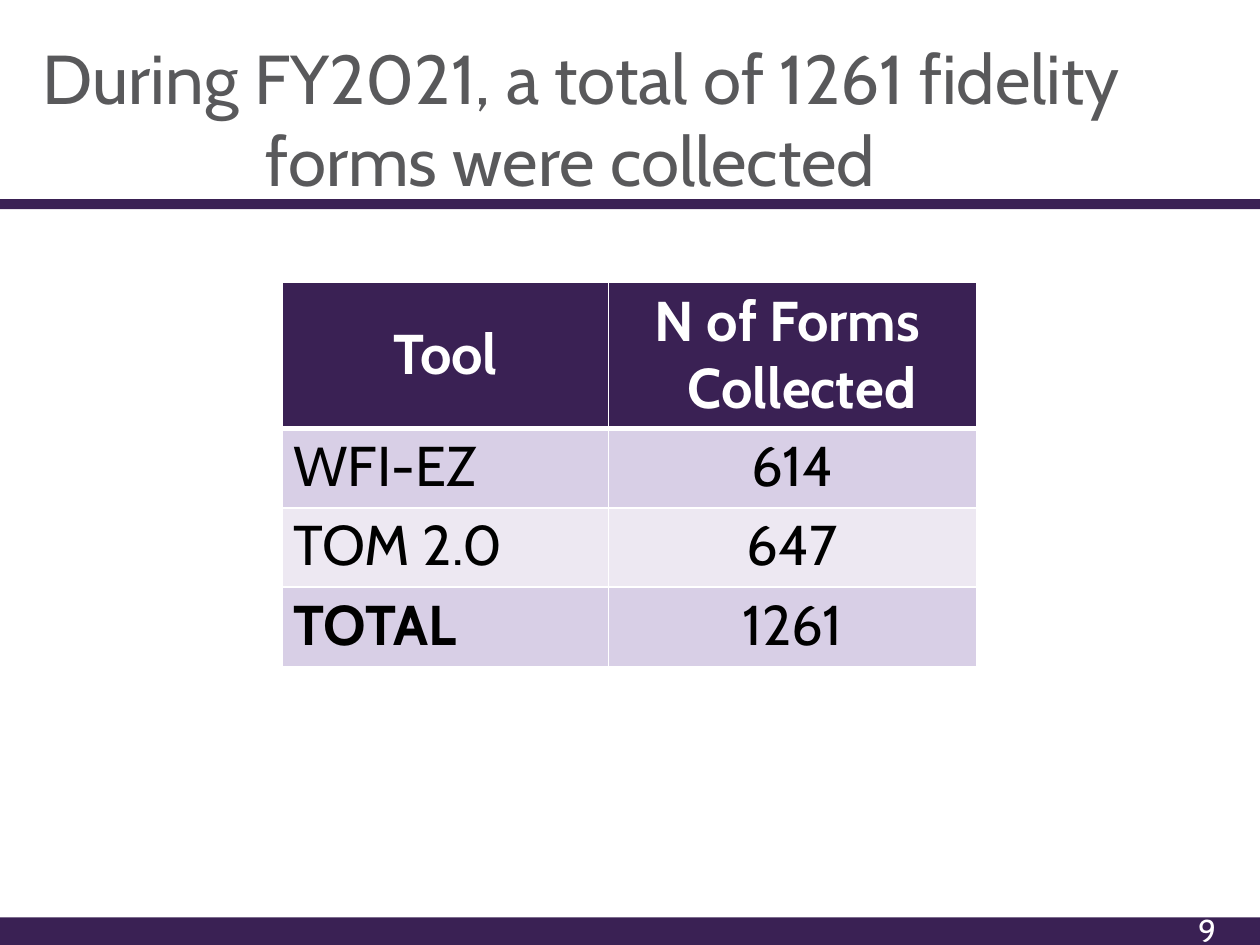
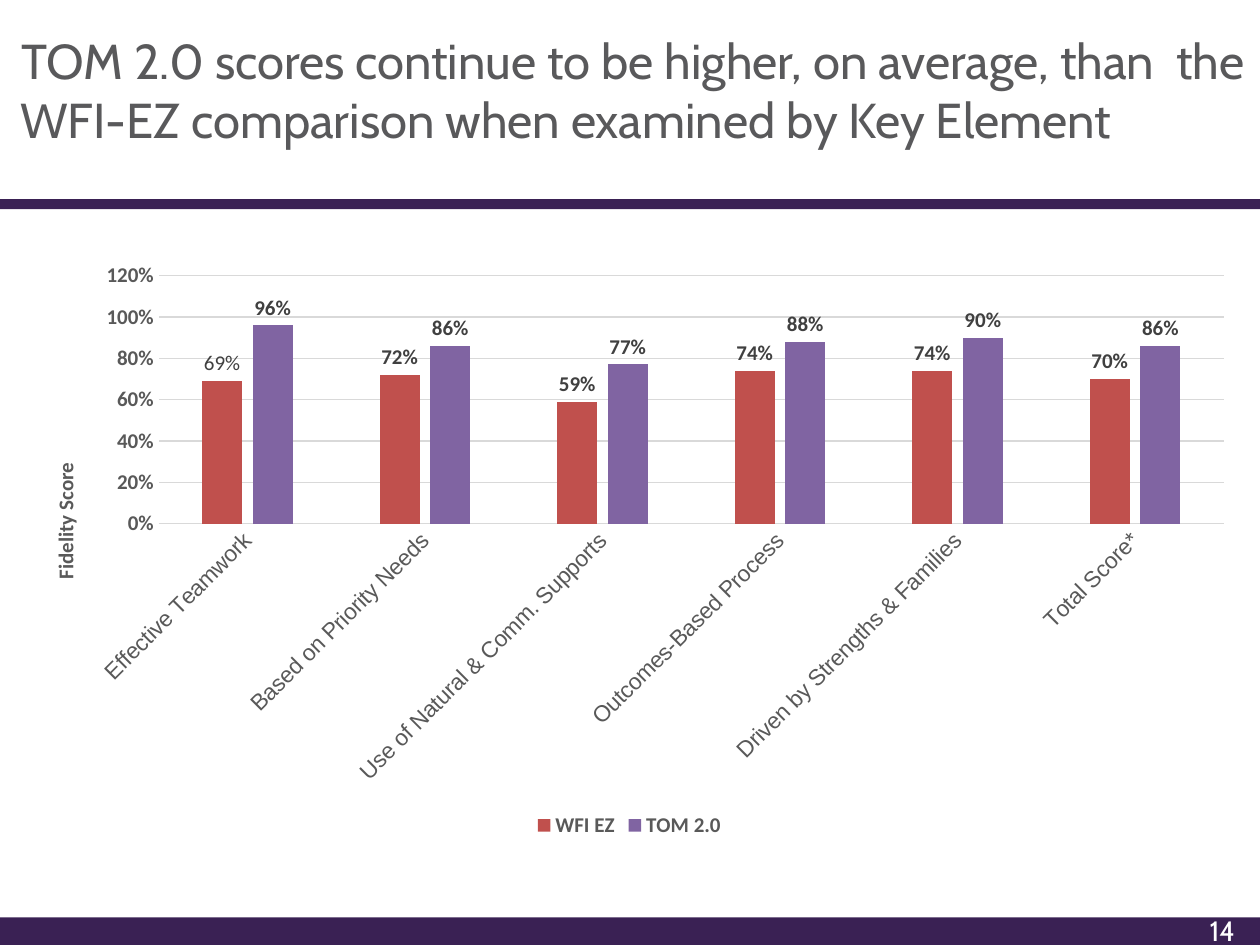
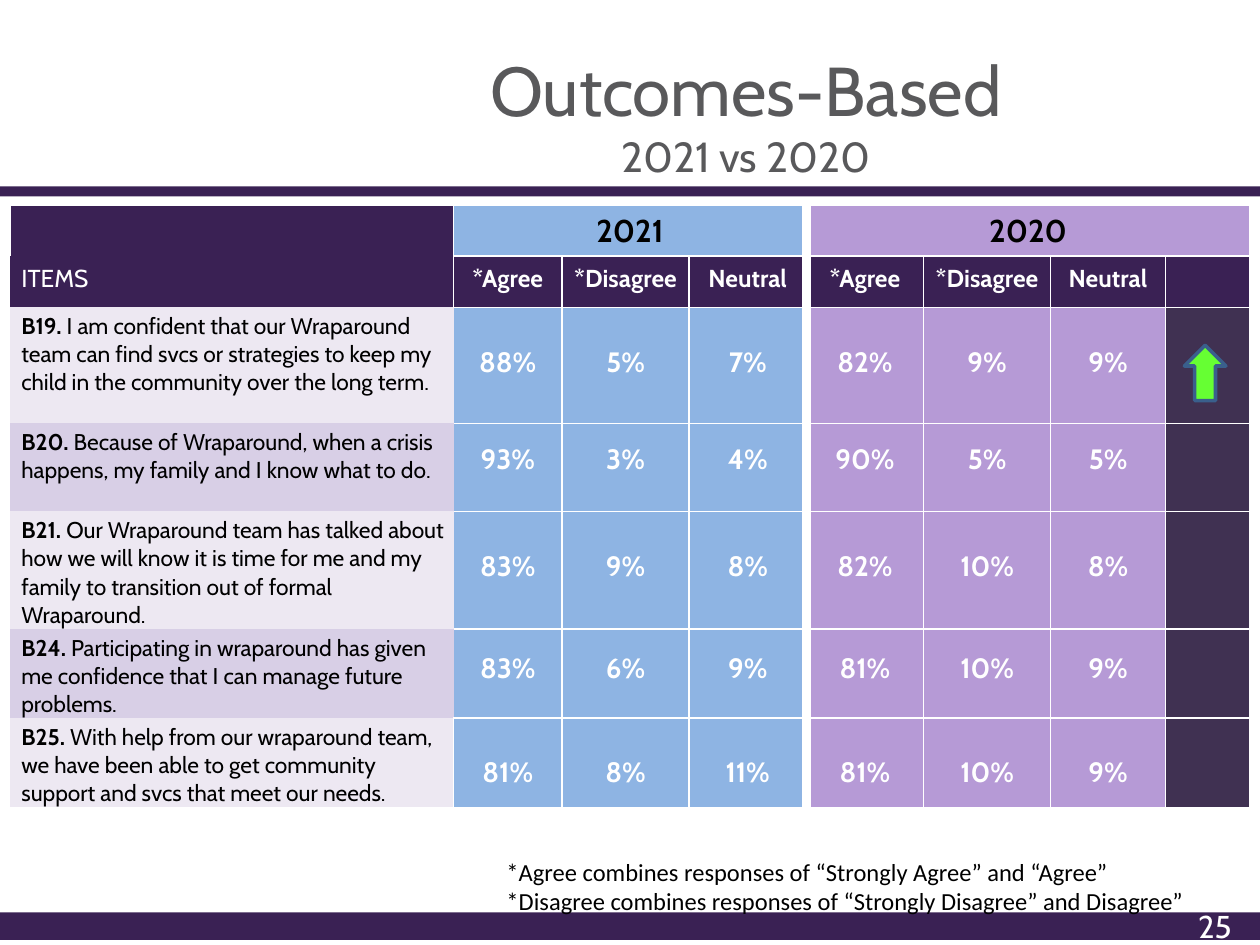
from dataclasses import dataclass

from lxml.etree import SubElement
from pptx import Presentation
from pptx.chart.data import CategoryChartData
from pptx.dml.color import RGBColor
from pptx.enum.chart import XL_CHART_TYPE as ChartType
from pptx.enum.chart import XL_LABEL_POSITION as LabelPos
from pptx.enum.chart import XL_LEGEND_POSITION as LegendPos
from pptx.enum.chart import XL_TICK_MARK as TickMark
from pptx.enum.shapes import MSO_SHAPE as Shape
from pptx.enum.text import MSO_ANCHOR as Anchor
from pptx.enum.text import MSO_AUTO_SIZE as AutoSize
from pptx.enum.text import PP_ALIGN as Align
from pptx.oxml import parse_xml
from pptx.oxml.ns import nsdecls, qn
from pptx.util import Emu, Inches, Pt

COLUMNS, ROWS = 100, 75  # grid that covers a slide


@dataclass(frozen=True)
class Theme:
    # Colours
    purple: str = "3A2154"
    deep: str = "403152"
    lilac: str = "D8CFE6"
    pale: str = "EDE8F2"
    blue: str = "8EB4E3"
    violet: str = "B69AD6"
    heading: str = "59595B"
    white: str = "FFFFFF"
    black: str = "000000"
    wfi: str = "C0504D"
    tom: str = "8064A2"
    axis: str = "595959"
    value: str = "404040"
    grid: str = "D9D9D9"
    arrow: str = "66FF33"
    arrow_edge: str = "3A5F8C"
    # Fonts and type sizes
    font: str = "Cabin"
    note_font: str = "Calibri"
    label_font: str = "Arial"
    title: float = 39.5
    long_title: float = 28
    subtitle: float = 24
    big: float = 32
    year: float = 18
    score: float = 16
    body: float = 14
    item: float = 13
    chart: float = 12


def rgb(code):
    return RGBColor.from_string(code)


def set_font(font, size, color, bold=False, name=Theme.font):
    font.size, font.bold, font.name = Pt(size), bold, name
    font.color.rgb = rgb(color)


def set_indent(paragraph, left, first=0, right=0):
    props = paragraph._p.get_or_add_pPr()
    for key, inches in (("marL", left), ("indent", first), ("marR", right)):
        props.set(key, str(Inches(inches)))


def set_margins(target, left=0, top=0, right=0, bottom=0):
    target.margin_left, target.margin_top = Inches(left), Inches(top)
    target.margin_right, target.margin_bottom = Inches(right), Inches(bottom)


def place_by_share(parent, target, x, y, w=None, h=None):
    """Put a chart part at shares of the chart's size."""
    layout = parent.find(qn("c:layout"))
    if layout is None:
        layout = parse_xml(f"<c:layout {nsdecls('c')}/>")
        position = 1 if parent.tag == qn("c:title") else 0
        parent.insert(position, layout)
    manual = SubElement(layout, qn("c:manualLayout"))
    settings = [("layoutTarget", target), ("xMode", "edge"), ("yMode", "edge"),
                ("x", x), ("y", y), ("w", w), ("h", h)]
    for tag, setting in settings:
        if setting is not None:
            SubElement(manual, qn(f"c:{tag}")).set("val", str(setting))


class Deck:
    def __init__(self, theme):
        self.theme = theme
        self.prs = Presentation()
        self.prs.slide_width, self.prs.slide_height = Inches(10), Inches(7.5)
        self.slide = None

    def box(self, col, row, cols, rows):
        unit_x = self.prs.slide_width / COLUMNS
        unit_y = self.prs.slide_height / ROWS
        return (Emu(round(col * unit_x)), Emu(round(row * unit_y)),
                Emu(round(cols * unit_x)), Emu(round(rows * unit_y)))

    def start(self, rule_row=15.8, band_row=72.8):
        self.slide = self.prs.slides.add_slide(self.prs.slide_layouts[5])
        self.shape(Shape.RECTANGLE, (0, band_row, COLUMNS, 2.2), self.theme.purple)
        self.shape(Shape.RECTANGLE, (0, rule_row, COLUMNS, 0.8), self.theme.purple)

    def shape(self, kind, area, fill, edge=None):
        shape = self.slide.shapes.add_shape(kind, *self.box(*area))
        shape.shadow.inherit = False
        shape.fill.solid()
        shape.fill.fore_color.rgb = rgb(fill)
        if edge:
            shape.line.color.rgb, shape.line.width = rgb(edge), Pt(2)
        else:
            shape.line.fill.background()

    def title(self, area, lines, top, align=Align.LEFT, indent=(0, 0), spacing=None):
        """Lines are pairs of text and type size."""
        title = self.slide.shapes.title
        title.left, title.top, title.width, title.height = self.box(*area)
        frame = title.text_frame
        frame.auto_size, frame.word_wrap = AutoSize.NONE, True
        frame.vertical_anchor = Anchor.TOP
        set_margins(frame, top=top)
        frame.text = "\n".join(text for text, _ in lines)
        for paragraph, (_, size) in zip(frame.paragraphs, lines):
            set_indent(paragraph, *indent)
            paragraph.alignment = align
            paragraph.line_spacing = spacing
            set_font(paragraph.font, size, self.theme.heading)

    def text(self, area, text, size, color, font, spacing=None):
        frame = self.slide.shapes.add_textbox(*self.box(*area)).text_frame
        frame.word_wrap = True
        set_margins(frame)
        frame.text = text
        for paragraph in frame.paragraphs:
            paragraph.line_spacing = spacing
            set_font(paragraph.font, size, color, name=font)

    def page(self, number, col=95.1, row=72.8, size=Theme.year):
        self.text((col, row, 4, 2.5), number, size, self.theme.white,
                  self.theme.font, Pt(18))

    def table(self, col, row, widths, heights):
        area = self.box(col, row, sum(widths), sum(heights))
        table = self.slide.shapes.add_table(len(heights), len(widths), *area).table
        table.first_row = table.horz_banding = False
        for column, width in zip(table.columns, widths):
            column.width = self.box(0, 0, width, 0)[2]
        for line, height in zip(table.rows, heights):
            line.height = self.box(0, 0, 0, height)[3]
        return table

    def cell(self, cell, fill, text="", size=Theme.body, color=Theme.white, lead="",
             bold=False, top=0, align=Align.CENTER, spacing=None, borders=None):
        """Lead is bold text before the rest; borders gives widths that are not 1."""
        set_margins(cell, left=0.09 if align == Align.LEFT else 0, top=top)
        paragraph = cell.text_frame.paragraphs[0]
        paragraph.alignment, paragraph.line_spacing = align, spacing
        if lead:
            lead_run = paragraph.add_run()
            lead_run.text, lead_run.font.bold = lead, True
        if text:
            paragraph.add_run().text = text
        set_font(paragraph.font, size, color, bold)
        cell.fill.solid()
        cell.fill.fore_color.rgb = rgb(fill)
        widths = {"L": 1, "R": 1, "T": 1, "B": 1} | (borders or {})
        for place, (side, width) in enumerate(widths.items()):
            paint = (f'<a:solidFill><a:srgbClr val="{self.theme.white}"/></a:solidFill>'
                     if width else "<a:noFill/>")
            cell._tc.get_or_add_tcPr().insert(place, parse_xml(
                f'<a:ln{side} {nsdecls("a")} w="{Pt(width)}">{paint}</a:ln{side}>'))
        return paragraph

    def column_chart(self, area, categories, series, axis_title):
        """Series are triples of name, values and colour."""
        theme = self.theme
        data = CategoryChartData(number_format="0%")
        data.categories = categories
        for name, values, _ in series:
            data.add_series(name, values)
        chart = self.slide.shapes.add_chart(
            ChartType.COLUMN_CLUSTERED, *self.box(*area), data).chart
        chart.has_title = False
        set_font(chart.font, theme.chart, theme.axis, True, theme.note_font)
        plot = chart.plots[0]
        plot.vary_by_categories, plot.gap_width, plot.overlap = False, 219, -27

        # Columns and their labels
        for columns, (_, _, color) in zip(plot.series, series):
            columns.format.fill.solid()
            columns.format.fill.fore_color.rgb = rgb(color)
            labels = columns.data_labels
            labels.show_value, labels.position = True, LabelPos.OUTSIDE_END
            labels.number_format, labels.number_format_is_linked = "0%", False
            set_font(labels.font, theme.chart, theme.value, True, theme.note_font)

        # Axes
        names, scores = chart.category_axis, chart.value_axis
        names.major_tick_mark = scores.major_tick_mark = TickMark.NONE
        set_font(names.tick_labels.font, theme.item, theme.axis, name=theme.label_font)
        names._element.find(qn("c:txPr")).find(qn("a:bodyPr")).set("rot", "-2700000")
        set_font(scores.tick_labels.font, theme.chart, theme.axis, True, theme.note_font)
        scores.tick_labels.number_format = "0%"
        scores.tick_labels.number_format_is_linked = False
        scores.minimum_scale, scores.maximum_scale, scores.major_unit = 0, 1.2, 0.2
        scores.format.line.fill.background()
        for line in (names.format.line, scores.major_gridlines.format.line):
            line.color.rgb, line.width = rgb(theme.grid), Pt(0.75)
        heading = scores.axis_title
        heading.text_frame.text = axis_title
        set_font(heading.text_frame.paragraphs[0].font, theme.chart, theme.axis,
                 True, theme.note_font)
        heading.text_frame._txBody.find(qn("a:bodyPr")).set("rot", "-5400000")

        # Legend and layout
        chart.has_legend = True
        chart.legend.position = LegendPos.BOTTOM
        chart.legend.include_in_layout = False
        set_font(chart.legend.font, theme.chart, theme.axis, True, theme.note_font)
        place_by_share(heading._element, None, 0.03, 0.35)
        plot_area = chart._chartSpace.find(qn("c:chart")).find(qn("c:plotArea"))
        place_by_share(plot_area, "inner", 0.12, 0.04, 0.86, 0.42)
        return chart


def forms_slide(deck):
    theme = deck.theme
    deck.start()
    deck.title((0.8, -0.5, 98.3, 16.5),
               [("During FY2021, a total of 1261 fidelity forms were collected", theme.title)],
               top=0.33, indent=(2.03, -1.77), spacing=Pt(47.2))
    forms = deck.table(22.4, 22.4, [25.9, 29.2], [11.6, 6.3, 6.3, 6.3])

    # Header
    header = dict(size=theme.big, bold=True, borders={"B": 3})
    deck.cell(forms.cell(0, 0), theme.purple, "Tool", top=0.3, **header)
    collected = deck.cell(forms.cell(0, 1), theme.purple, "N of Forms Collected",
                          top=0.05, spacing=Pt(38.2), **header)
    set_indent(collected, 0.55, -0.23, 0.4)

    # Counts
    counts = [("WFI-EZ", "614"), ("TOM 2.0", "647"), ("TOTAL", "1261")]
    for row, (tool, count) in enumerate(counts, start=1):
        style = dict(fill=theme.lilac if row % 2 else theme.pale, size=theme.big,
                     color=theme.black, top=0.03, borders={"T": 3 if row == 1 else 1})
        deck.cell(forms.cell(row, 0), text=tool, bold=tool == "TOTAL",
                  align=Align.LEFT, **style)
        deck.cell(forms.cell(row, 1), text=count, **style)
    deck.page("9")


def scores_slide(deck):
    theme = deck.theme
    deck.start()
    deck.title((0.8, -2.5, 99.2, 14.4),
               [("TOM 2.0 scores continue to be higher, on average, than  the "
                 "WFI-EZ comparison when examined by Key Element", theme.long_title)],
               top=0.49, indent=(0.08, 0.01))
    elements = ["Effective Teamwork", "Based on Priority Needs",
                "Use of Natural & Comm. Supports", "Outcomes-Based Process",
                "Driven by Strengths & Families", "Total Score*"]
    chart = deck.column_chart(
        (0.8, 20, 98.3, 46.9), elements,
        [("WFI EZ", (0.69, 0.72, 0.59, 0.74, 0.74, 0.7), theme.wfi),
         ("TOM 2.0", (0.96, 0.86, 0.77, 0.88, 0.9, 0.86), theme.tom)],
        "Fidelity Score")

    # The first label is not bold
    teamwork = chart.plots[0].series[0].points[0].data_label
    teamwork.position = LabelPos.OUTSIDE_END
    teamwork.text_frame.text = "69%"
    set_font(teamwork.text_frame.paragraphs[0].runs[0].font, theme.chart, theme.value,
             name=theme.note_font)
    deck.page("14", col=96, row=72.7, size=theme.score)


def outcomes_slide(deck):
    theme = deck.theme
    deck.start(rule_row=14.8, band_row=72.4)
    deck.title((5.2, -0.5, 89.6, 15.1),
               [("Outcomes-Based", theme.title), ("2021 vs 2020", theme.subtitle)],
               top=0.43, align=Align.CENTER, indent=(1.84, 0))

    # Code, statement, space above the scores, row height, scores
    items = [
        ("B19.", " I am confident that our Wraparound team can find svcs or strategies "
         "to keep my child in the community over the long term.",
         0.3, 9.2, (88, 5, 7, 82, 9, 9)),
        ("B20.", " Because of Wraparound, when a crisis happens, my family and I know "
         "what to do.", 0.15, 7, (93, 3, 4, 90, 5, 5)),
        ("B21.", " Our Wraparound team has talked about how we will know it is time for "
         "me and my family to transition out of formal Wraparound.",
         0.3, 9.2, (83, 9, 8, 82, 10, 8)),
        ("B24.", " Participating in wraparound has given me confidence that I can manage "
         "future problems.", 0.18, 7, (83, 6, 9, 81, 10, 9)),
        ("B25.", " With help from our wraparound team, we have been able to get community "
         "support and svcs that meet our needs.", 0.3, 7, (81, 8, 11, 81, 10, 9)),
    ]
    results = deck.table(0.8, 16.2, [35.2, 8.6, 10.1, 9.3, 9.3, 10.1, 9.1, 6.7],
                         [4.1, 4.1] + [item[3] for item in items])
    year_gap = {3: {"R": 6}, 4: {"L": 6}}  # wide line between the years

    # Years
    deck.cell(results.cell(0, 0), theme.purple, borders={"T": 3, "B": 0})
    for year, fill, first, last, gap in (("2021", theme.blue, 1, 3, {"R": 6}),
                                         ("2020", theme.violet, 4, 7, {"L": 6})):
        results.cell(0, first).merge(results.cell(0, last))
        deck.cell(results.cell(0, first), fill, year, theme.year, theme.black,
                  bold=True, top=0.06, borders={"T": 3} | gap)

    # Answers
    deck.cell(results.cell(1, 0), theme.purple, "ITEMS", top=0.06, align=Align.LEFT,
              borders={"L": 0, "T": 0, "B": 0})
    answers = ["*Agree", "*Disagree", "Neutral"] * 2 + [""]
    for col, answer in enumerate(answers, start=1):
        deck.cell(results.cell(1, col), theme.purple, answer, bold=True, top=0.06,
                  borders=year_gap.get(col))

    # Items and scores
    for row, (code, statement, top, _, scores) in enumerate(items, start=2):
        edge = 1 if row == len(items) + 1 else 0
        deck.cell(results.cell(row, 0), theme.lilac if row % 2 else theme.pale,
                  statement, theme.item, theme.black, lead=code, top=0.04,
                  align=Align.LEFT, spacing=1.02,
                  borders={"L": 0, "R": edge, "T": 0, "B": 0})
        for col, score in enumerate(scores, start=1):
            borders = {"L": edge} if col == 1 else year_gap.get(col)
            deck.cell(results.cell(row, col), theme.blue if col < 4 else theme.violet,
                      f"{score}%", theme.score, bold=True, top=top, borders=borders)
        deck.cell(results.cell(row, 7), theme.deep)

    # Rise, notes and page number
    deck.shape(Shape.UP_ARROW, (94, 27.4, 3.3, 4.4), theme.arrow, theme.arrow_edge)
    deck.text((40.2, 68, 58, 4.7),
              "*Agree combines responses of “Strongly Agree” and “Agree”\n"
              "*Disagree combines responses of “Strongly Disagree” and Disagree”",
              theme.body, theme.black, theme.note_font)
    deck.page("25", row=72.5)


def main():
    deck = Deck(Theme())
    forms_slide(deck)
    scores_slide(deck)
    outcomes_slide(deck)
    deck.prs.save("out.pptx")


if __name__ == "__main__":
    main()
